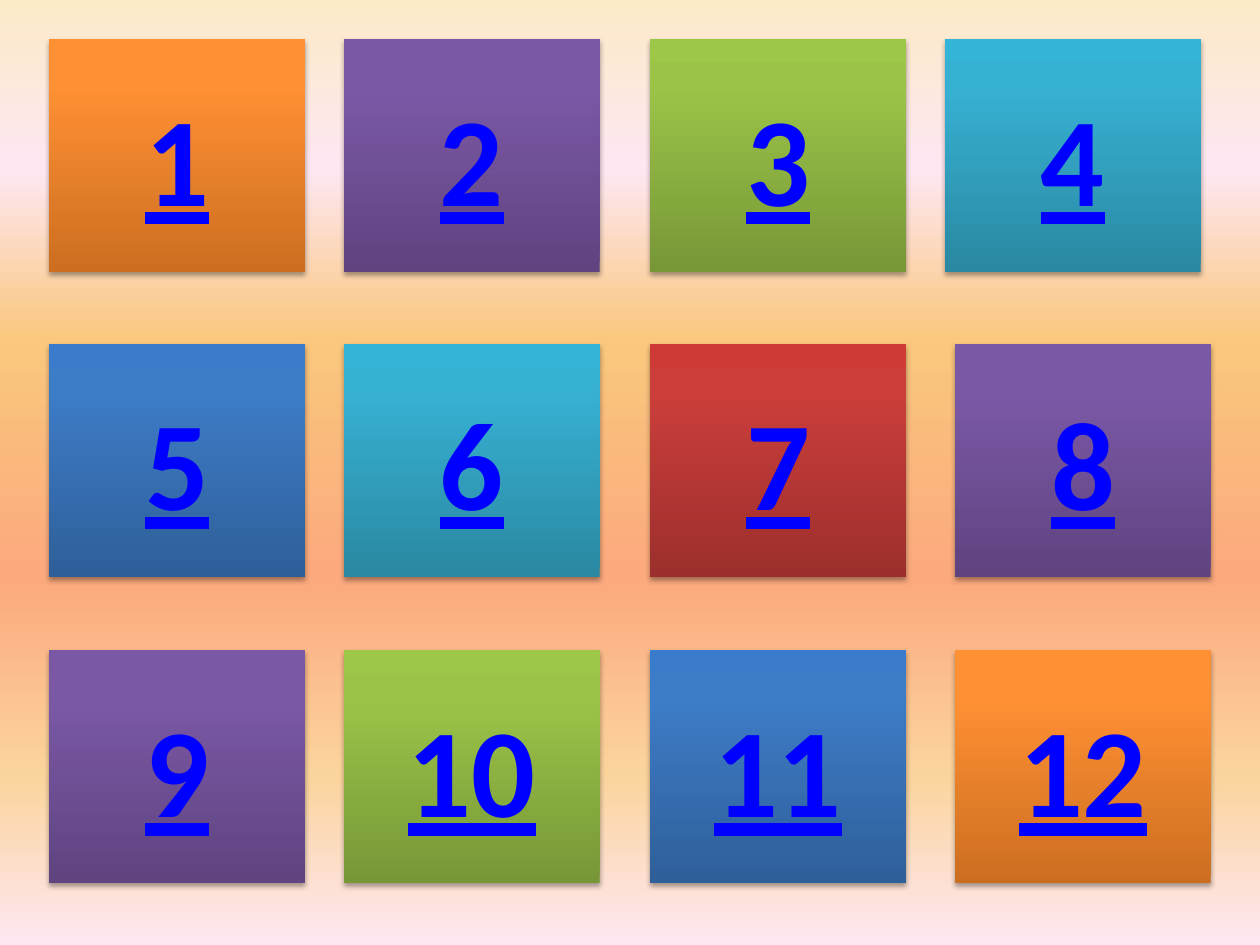
from lxml import etree
from pptx import Presentation, util as u
from pptx.dml.color import RGBColor
from pptx.enum import shapes, text
from pptx.oxml.ns import qn


def add_color(parent, hex_color, alpha=100):
    color = etree.SubElement(parent, qn("a:srgbClr"), val=hex_color)
    if alpha < 100:
        etree.SubElement(color, qn("a:alpha"), val=str(alpha * 1000))


def set_gradient(fill, element, stops, angle):
    fill.gradient()
    fill.gradient_angle = angle
    stop_list = next(element.iter(qn("a:gsLst")))
    for old in list(stop_list):
        stop_list.remove(old)
    for pos, color in stops:
        add_color(etree.SubElement(stop_list, qn("a:gs"), pos=str(pos * 1000)), color)


prs = Presentation()
prs.slide_width, prs.slide_height = u.Inches(10), u.Inches(7.5)
s = prs.slides.add_slide(prs.slide_layouts[6])

# Background: top-to-bottom sunset
SUNSET = [(0, "FBEAC7"), (18, "FEE7F2"), (36, "FAC77D"),
          (61, "FBA97D"), (82, "FBD49C"), (100, "FEE7F2")]
set_gradient(s.background.fill, s._element, SUNSET, 270)

# Tile grid
COLUMNS = [0.39, 2.73, 5.16, 7.58]
ROWS = [0.31, 2.73, 5.16]
TILE_W, TILE_H = 2.03, 1.85
LAST_TOP_LEFT = 7.5  # the last tile of the top row sits a little further left

# Bottom, near-top and top colour of each tile style
STYLES = {
    "orange": ("CC6E20", "FF9034", "FF9136"),
    "purple": ("5F4480", "7B58A6", "7C57A8"),
    "green": ("779737", "9BC348", "9DC746"),
    "teal": ("2A88A2", "37B1D2", "34B4D6"),
    "blue": ("2F5F99", "3D7CC7", "3A7CCB"),
    "red": ("9C2F2D", "CB3E3A", "CE3B37"),
}
TILES = ["orange", "purple", "green", "teal",
         "blue", "teal", "red", "purple",
         "purple", "green", "blue", "orange"]
FONT = {"name": "Calibri", "size": u.Pt(72), "bold": True, "underline": True}

for i, style in enumerate(TILES):
    row, col = divmod(i, len(COLUMNS))
    left = LAST_TOP_LEFT if (row, col) == (0, 3) else COLUMNS[col]
    sp = s.shapes.add_shape(shapes.MSO_SHAPE.RECTANGLE, u.Inches(left), u.Inches(ROWS[row]),
                            u.Inches(TILE_W), u.Inches(TILE_H))
    set_gradient(sp.fill, sp._element, zip((0, 80, 100), STYLES[style]), 90)
    sp.line.fill.background()

    # Soft shadow straight below
    sp.shadow.inherit = False
    effects = next(sp._element.iter(qn("a:effectLst")))
    shadow = etree.SubElement(effects, qn("a:outerShdw"), blurRad=str(u.Pt(3.1)),
                              dist=str(u.Pt(1.8)), dir="5400000", rotWithShape="0")
    add_color(shadow, "000000", 35)

    # Number
    tf = sp.text_frame
    tf.word_wrap = True
    tf.vertical_anchor = text.MSO_ANCHOR.MIDDLE
    p = tf.paragraphs[0]
    p.alignment = text.PP_ALIGN.CENTER
    r = p.add_run()
    r.text = str(i + 1)
    for name, value in FONT.items():
        setattr(r.font, name, value)
    r.font.color.rgb = RGBColor.from_string("0000FF")

prs.save("out.pptx")
